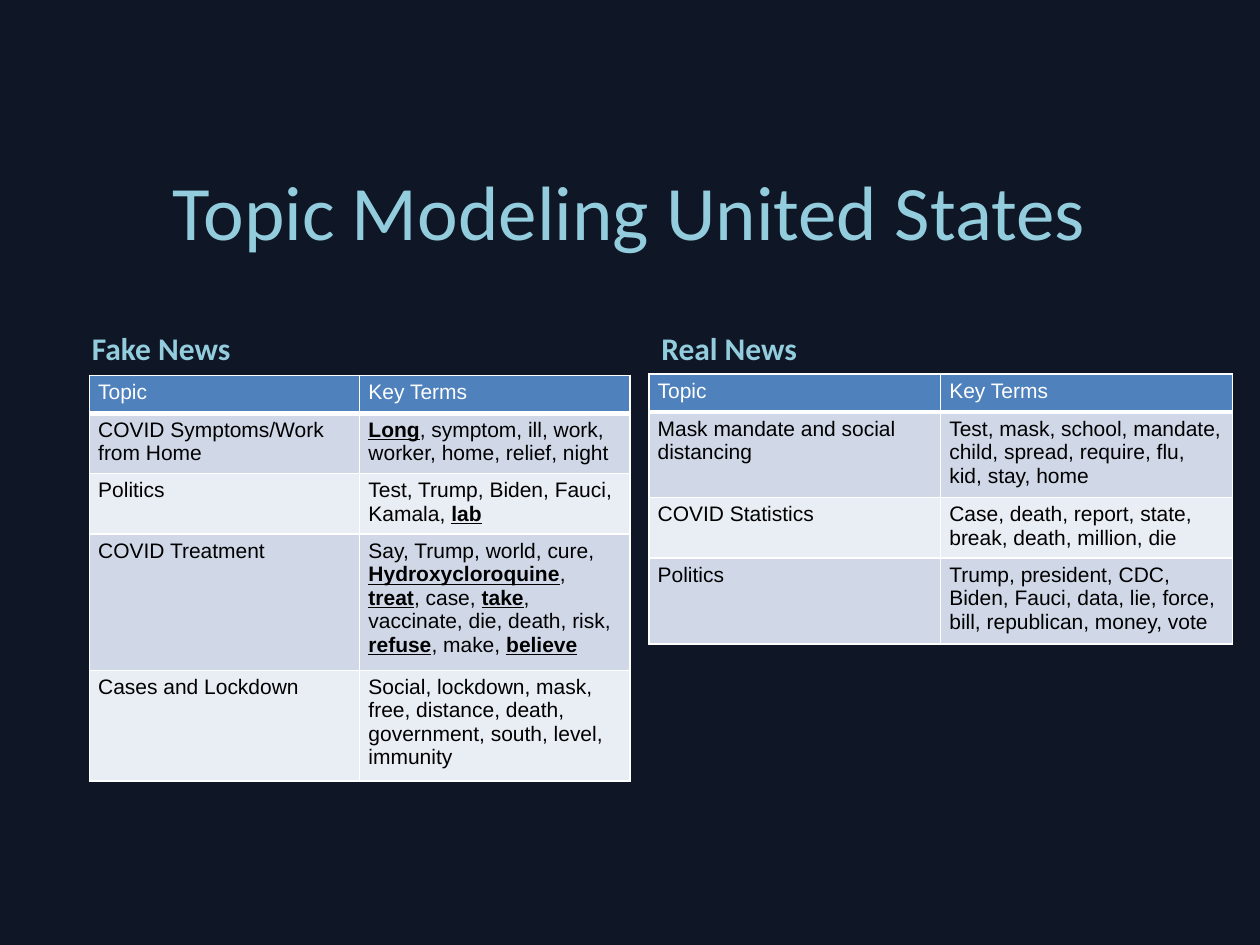
from lxml.etree import SubElement as Sub
from pptx import Presentation
from pptx.dml.color import RGBColor
from pptx.enum.text import MSO_ANCHOR as Anchor, PP_ALIGN as Align
from pptx.oxml.ns import qn
from pptx.util import Inches, Pt

BACK, ACCENT, WHITE, BLACK = "0F1625", "93CDDD", "FFFFFF", "000000"
HEAD, BANDS = "4F81BD", ("D0D8E8", "E9EDF4")

TITLE = "Topic Modeling United States"
COLS = ("Topic", "Key Terms")
# Terms between asterisks are bold and underlined.
FAKE = [
    ("COVID Symptoms/Work from Home",
     "*Long*, symptom, ill, work, worker, home, relief, night"),
    ("Politics", "Test, Trump, Biden, Fauci, Kamala, *lab*"),
    ("COVID Treatment",
     "Say, Trump, world, cure, *Hydroxycloroquine*, *treat*, case, *take*, "
     "vaccinate, die, death, risk, *refuse*, make, *believe*"),
    ("Cases and Lockdown",
     "Social, lockdown, mask, free, distance, death, government, south, "
     "level, immunity"),
]
REAL = [
    ("Mask mandate and social distancing",
     "Test, mask, school, mandate, child, spread, require, flu, kid, stay, home"),
    ("COVID Statistics", "Case, death, report, state, break, death, million, die"),
    ("Politics",
     "Trump, president, CDC, Biden, Fauci, data, lie, force, bill, "
     "republican, money, vote"),
]
# heading, heading left, table left, top and width, row heights, rows
PANELS = [
    ("Fake News", 0.63, 0.71, 2.98, 4.29, (0.3, 0.47, 0.47, 1.07, 0.88), FAKE),
    ("Real News", 5.15, 5.15, 2.97, 4.63, (0.3, 0.68, 0.47, 0.68), REAL),
]


def color(code):
    return RGBColor.from_string(code)


def style(para, face, size, code, bold=False):
    font = para.font
    font.name, font.size, font.bold = face, Pt(size), bold
    font.color.rgb = color(code)


def place(shape, *box):
    shape.left, shape.top, shape.width, shape.height = map(Inches, box)


def edge(cell, base):
    """Draw white cell borders; base is the width of the bottom one."""
    props = cell._tc.get_or_add_tcPr()
    for side, width in zip("LRTB", (1, 1, 1, base)):
        line = Sub(props, qn("a:ln" + side), w=str(Pt(width)))
        Sub(Sub(line, qn("a:solidFill")), qn("a:srgbClr"), val=WHITE)


def fill_cell(cell, text, back, ink, base):
    edge(cell, base)
    cell.fill.solid()
    cell.fill.fore_color.rgb = color(back)
    cell.margin_left = cell.margin_right = Inches(0.07)
    cell.margin_top = cell.margin_bottom = Inches(0.04)
    para = cell.text_frame.paragraphs[0]
    style(para, "Arial", 12, ink)
    for i, part in enumerate(text.split("*")):
        if part:
            run = para.add_run()
            run.text = part
            run.font.bold = run.font.underline = i % 2 == 1


def add_head(slide, text, left):
    box = slide.shapes.add_textbox(*map(Inches, (left, 2.34, 4.22, 0.62)))
    frame = box.text_frame
    frame.word_wrap = True
    frame.vertical_anchor = Anchor.BOTTOM
    frame.text = text
    style(frame.paragraphs[0], "Calibri", 18, ACCENT, True)


def add_grid(slide, left, top, width, heights, rows):
    box = map(Inches, (left, top, width, sum(heights)))
    table = slide.shapes.add_table(len(heights), len(COLS), *box).table
    for r, (height, row) in enumerate(zip(heights, [COLS] + rows)):
        table.rows[r].height = Inches(height)
        look = (BANDS[(r - 1) % 2], BLACK, 1) if r else (HEAD, WHITE, 3)
        for c, text in enumerate(row):
            fill_cell(table.cell(r, c), text, *look)


def main():
    deck = Presentation()
    deck.slide_width, deck.slide_height = Inches(10), Inches(7.5)
    slide = deck.slides.add_slide(deck.slide_layouts[5])
    slide.background.fill.solid()
    slide.background.fill.fore_color.rgb = color(BACK)

    title = slide.shapes.title
    place(title, 0.62, 0.83, 8.75, 1.67)
    title.text_frame.text = TITLE
    title.text_frame.vertical_anchor = Anchor.MIDDLE
    para = title.text_frame.paragraphs[0]
    para.alignment = Align.CENTER
    style(para, "Calibri", 44, ACCENT)

    for name, start, *grid in PANELS:
        add_head(slide, name, start)
        add_grid(slide, *grid)
    deck.save("out.pptx")


if __name__ == "__main__":
    main()
